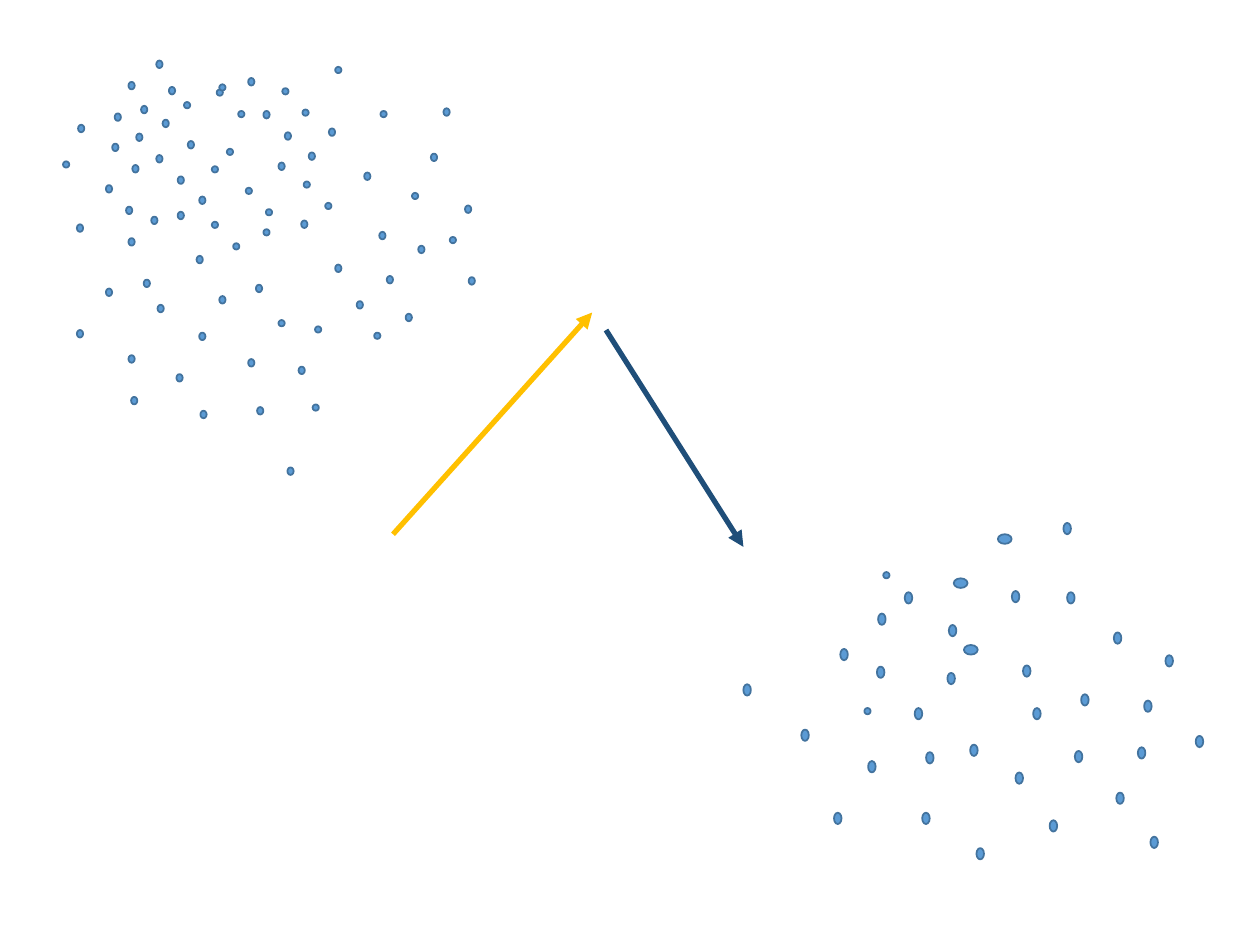
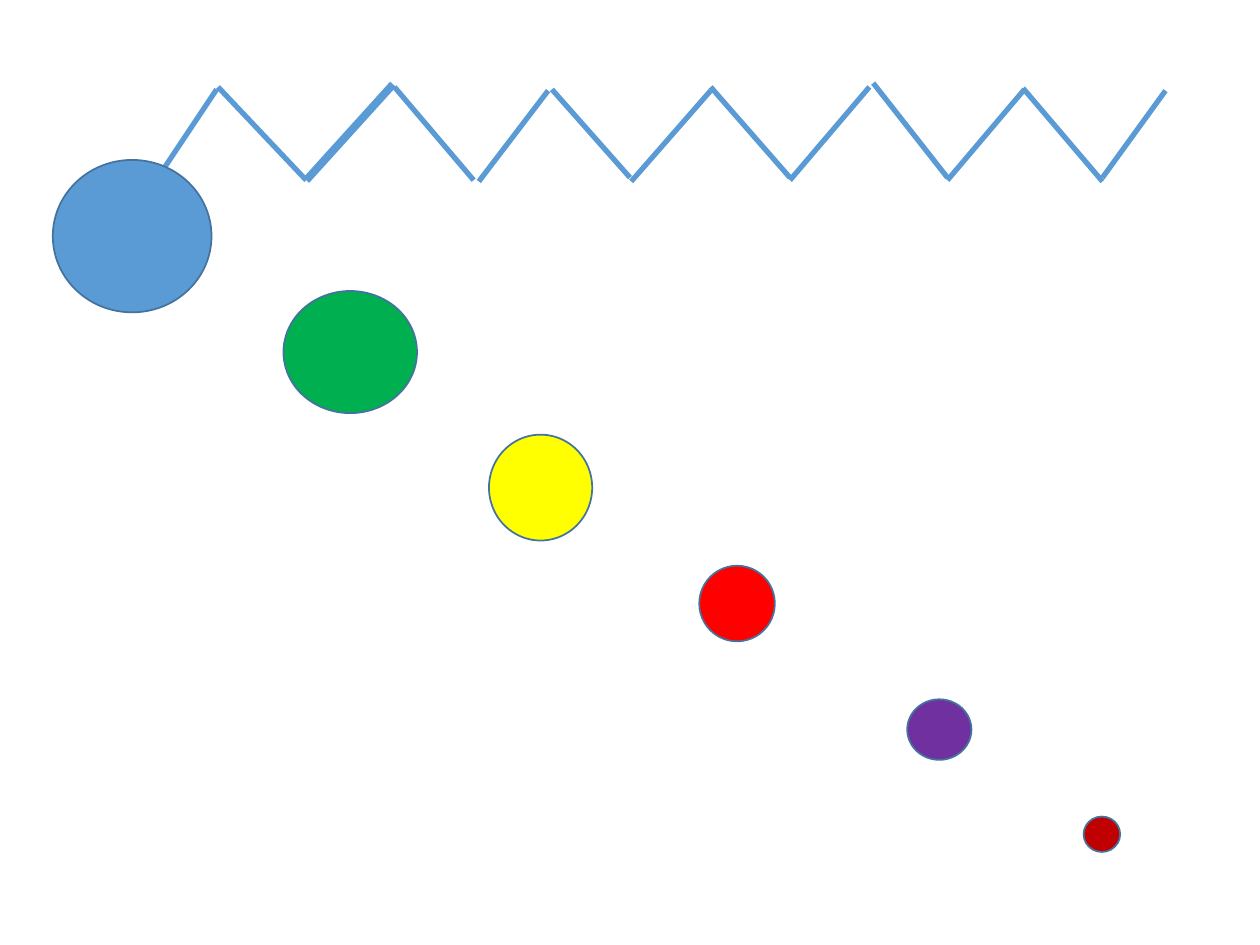
import pptx
import pptx.dml.color
import pptx.enum.shapes
import pptx.oxml
import pptx.oxml.ns
import pptx.util

Pt = pptx.util.Pt

# Shared colours
BLUE, OUTLINE = "5B9BD5", "43739E"
GOLD, NAVY = "FFC000", "1F4E79"

# Dot sizes (width, height)
TALL_DOT, ROUND_DOT = (3.6, 4.3), (3.6, 3.6)
LARGE_DOT, WIDE_DOT = (4.3, 6.5), (7.9, 5.5)

# Left and top of every dot, by size
DOTS = {
    TALL_DOT: [
        (65.5, 64.8), (64.1, 82.1), (80.6, 60.5), (92.9, 68.4), (73.4, 46.8),
        (60.5, 105.8), (96.5, 49.7), (113.8, 190.1), (112.3, 146.2),
        (203.8, 172.1), (267.8, 158.4), (150.5, 63.4), (89.3, 34.6),
        (107.3, 80.6), (82.1, 159.8), (231.8, 179.3), (159.1, 92.9),
        (246.2, 87.8), (216.7, 132.5), (164.2, 267.1), (141.8, 44.6),
        (73.4, 136.1), (90, 174.2), (146.2, 162.7), (114.5, 234.7),
        (74.9, 226.8), (101.5, 121), (77.8, 76.3), (75.6, 94.3),
        (60.5, 164.9), (43.9, 128.2), (44.6, 71.3), (72, 118.1),
        (221, 157.7), (86.4, 123.8), (89.3, 88.6), (253.4, 61.9),
        (146.9, 232.6), (162.7, 75.6), (239, 140.4), (125.3, 169.2),
        (100.8, 213.8), (73.4, 203), (101.5, 100.8), (265.7, 117.4),
        (191.5, 151.2), (176.4, 87.1), (172.1, 126), (113.8, 112.3),
        (141.8, 205.2), (208.1, 98.6), (187.9, 73.4), (43.9, 188.6),
        (170.6, 209.5),
    ],
    ROUND_DOT: [
        (178.6, 231.1), (150.5, 131), (121, 126.7), (140.4, 107.3),
        (123.8, 51.1), (213.8, 190.1), (105.1, 58.3), (173.5, 103.7),
        (159.1, 182.9), (217.4, 63.4), (161.3, 50.4), (235.4, 110.2),
        (121, 95), (133.2, 139), (151.9, 119.5), (136.1, 63.4),
        (125.3, 48.2), (36, 92.2), (185.8, 115.9), (129.6, 85),
        (191.5, 38.2), (172.8, 62.6), (180, 186.5), (257, 135.4),
        (504.7, 326.9), (493.9, 404.6),
    ],
    LARGE_DOT: [
        (517, 338.4), (527, 464.4), (542.2, 357.1), (501.8, 350.6),
        (424.8, 391), (501.1, 380.9), (578.2, 337.7), (584.6, 380.2),
        (607.7, 298.8), (541.4, 384.5), (480.2, 370.8), (457.9, 416.9),
        (609.8, 338.4), (683.3, 420.5), (580.3, 441.4), (653.8, 400.3),
        (617.8, 396.7), (636.5, 361.4), (496.1, 434.9), (554.4, 425.5),
        (666, 374.4), (522.7, 404.6), (476.6, 464.4), (529.2, 429.8),
        (558, 484.6), (590.4, 404.6), (650.2, 427), (614.2, 429.1),
        (599.8, 468.7), (637.9, 452.9), (657.4, 478.1),
    ],
    WIDE_DOT: [(545, 330.5), (550.8, 368.6), (570.2, 305.3)],
}

# Zigzag strokes: start x, start y, end x, end y, line width
ZIGZAG = [
    (87.8, 105.1, 123.8, 51.1, 3), (124.6, 49.7, 175, 103, 3),
    (175, 103, 224.6, 48.2, 4.5), (225.4, 49.7, 270.7, 103, 3),
    (273.6, 103.7, 313.2, 51.8, 3), (315.4, 51.1, 360, 101.5, 3),
    (360.7, 103.7, 406.1, 51.8, 3), (406.1, 49.7, 451.4, 101.5, 3),
    (451.4, 103, 496.8, 49.7, 3), (499, 47.5, 541.4, 101.5, 3),
    (541.4, 103, 585.4, 51.1, 3), (584.6, 50.4, 630, 103.7, 3),
    (630, 101.5, 666, 51.8, 3),
]

# Shrinking balls: left, top, width, height, fill
BALLS = [
    (30.2, 91.4, 90.7, 87.1, BLUE),
    (162, 166.3, 76.3, 69.8, "00B050"),
    (279.4, 248.4, 59, 60.5, "FFFF00"),
    (399.6, 323.3, 43.2, 43.2, "FF0000"),
    (518.4, 399.6, 36.7, 34.6, "7030A0"),
    (619.2, 466.6, 20.9, 20.2, "C00000"),
]


def rgb(hex_colour):
    return pptx.dml.color.RGBColor.from_string(hex_colour)


def add_slide(prs):
    return prs.slides.add_slide(prs.slide_layouts[6])


def add_ellipse(s, left, top, width, height, fill=BLUE):
    sp = s.shapes.add_shape(pptx.enum.shapes.MSO_SHAPE.OVAL,
                            Pt(left), Pt(top), Pt(width), Pt(height))
    sp.shadow.inherit = False
    sp.fill.solid()
    sp.fill.fore_color.rgb = rgb(fill)
    sp.line.color.rgb = rgb(OUTLINE)
    sp.line.width = Pt(1)


def add_line(s, x1, y1, x2, y2, width=3, colour=BLUE, arrow=False):
    line = s.shapes.add_connector(pptx.enum.shapes.MSO_CONNECTOR.STRAIGHT,
                                  Pt(x1), Pt(y1), Pt(x2), Pt(y2))
    line.line.color.rgb = rgb(colour)
    line.line.width = Pt(width)
    if arrow:
        tail = pptx.oxml.parse_xml(
            f'<a:tailEnd {pptx.oxml.ns.nsdecls("a")} type="triangle"/>')
        line.line._get_or_add_ln().append(tail)
    # An empty effect list switches the theme shadow off
    line._element.spPr.append(pptx.oxml.parse_xml(
        f'<a:effectLst {pptx.oxml.ns.nsdecls("a")}/>'))


def build_clusters(prs):
    s = add_slide(prs)
    for size, positions in DOTS.items():
        for left, top in positions:
            add_ellipse(s, left, top, *size)
    add_line(s, 224.6, 305.3, 338.4, 178.6, colour=GOLD, arrow=True)
    add_line(s, 346.3, 188.6, 424.8, 312.5, colour=NAVY, arrow=True)


def build_zigzag_and_balls(prs):
    s = add_slide(prs)
    for stroke in ZIGZAG:
        add_line(s, *stroke)
    for ball in BALLS:
        add_ellipse(s, *ball)


def main():
    prs = pptx.Presentation()
    prs.slide_width, prs.slide_height = Pt(720), Pt(540)
    build_clusters(prs)
    build_zigzag_and_balls(prs)
    prs.save("out.pptx")


if __name__ == "__main__":
    main()
